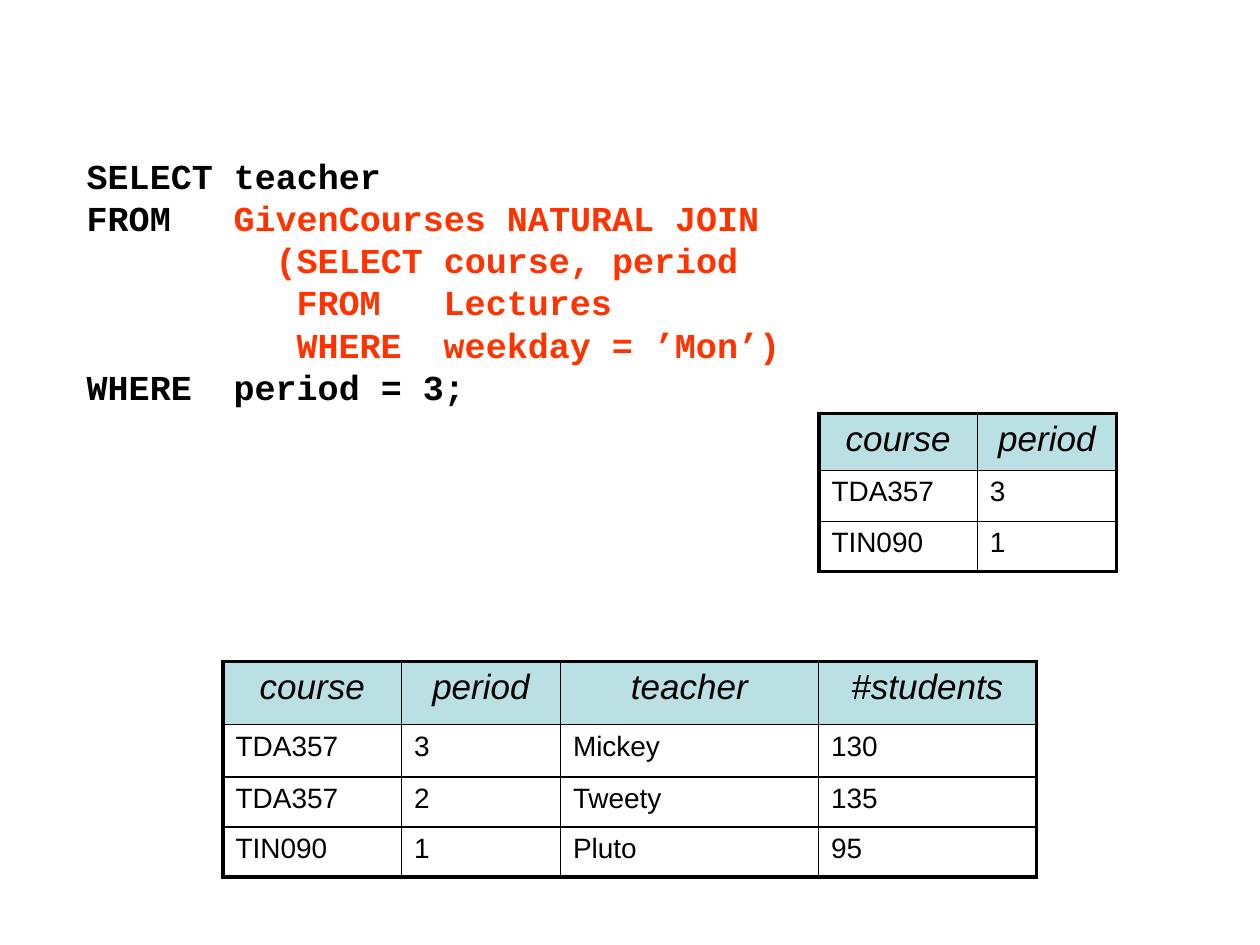
"""Build a slide that shows an SQL query with a subquery and two result tables."""
from lxml.etree import SubElement
from pptx import Presentation
from pptx.dml.color import RGBColor
from pptx.enum.text import PP_ALIGN
from pptx.oxml.ns import qn
from pptx.util import Pt

COLOURS = {"ink": "000000", "accent": "FF3300", "header": "BBE0E3"}
TAB_STOPS = [84, 108, 120, 204]
THIN, THICK = 1, 2.25

QUERY = [
    [("SELECT teacher", "ink")],
    [("FROM\t", "ink"), ("GivenCourses NATURAL JOIN", "accent")],
    [("\t\t(SELECT course, period", "accent")],
    [("\t\t\tFROM\tLectures", "accent")],
    [("\t\t\tWHERE\tweekday = ’Mon’)", "accent")],
    [("WHERE\tperiod = 3;", "ink")],
]
LECTURES = [["course", "period"], ["TDA357", "3"], ["TIN090", "1"]]
GIVEN_COURSES = [
    ["course", "period", "teacher", "#students"],
    ["TDA357", "3", "Mickey", "130"],
    ["TDA357", "2", "Tweety", "135"],
    ["TIN090", "1", "Pluto", "95"],
]


def colour(name):
    """Return the named colour."""
    return RGBColor.from_string(COLOURS[name])


def style_span(span, face, size, ink="ink"):
    """Set the font, size and colour of a run."""
    span.font.name = face
    span.font.size = Pt(size)
    span.font.color.rgb = colour(ink)


def add_query(page, left, top, width, height):
    """Add the query as one paragraph aligned by tab stops."""
    box = page.shapes.add_textbox(Pt(left), Pt(top), Pt(width), Pt(height))
    box.text_frame.word_wrap = True
    para = box.text_frame.paragraphs[0]
    para.space_before = Pt(10)
    para.line_spacing = Pt(24)
    tabs = SubElement(para._p.get_or_add_pPr(), qn("a:tabLst"))
    for stop in TAB_STOPS:
        SubElement(tabs, qn("a:tab"), pos=str(Pt(stop)), algn="l")
    for number, line in enumerate(QUERY):
        if number:
            para.add_line_break()
        for text, ink in line:
            span = para.add_run()
            span.text = text
            style_span(span, "Courier New", 20, ink)
            span.font.bold = True


def set_borders(cell, widths):
    """Draw the left, right, top and bottom borders of a cell."""
    properties = cell._tc.get_or_add_tcPr()
    for side, width in zip("LRTB", widths):
        line = SubElement(properties, qn(f"a:ln{side}"), w=str(Pt(width)))
        fill = SubElement(line, qn("a:solidFill"))
        SubElement(fill, qn("a:srgbClr"), val=COLOURS["ink"])


def fill_cell(cell, text, is_header):
    """Write and format the text of a cell and set its fill."""
    size = 20 if is_header else 16
    cell.text_frame.text = text
    para = cell.text_frame.paragraphs[0]
    para.space_before = Pt(size * 0.2)
    para.alignment = PP_ALIGN.CENTER if is_header else PP_ALIGN.LEFT
    span = para.runs[0]
    style_span(span, "Arial", size)
    span.font.italic = is_header
    if is_header:
        cell.fill.solid()
        cell.fill.fore_color.rgb = colour("header")
    else:
        cell.fill.background()


def add_grid(page, left, top, widths, heights, rows):
    """Add a table with a header row, thin inner lines and a thick frame."""
    frame = page.shapes.add_table(len(heights), len(widths), Pt(left), Pt(top),
                                  Pt(sum(widths)), Pt(sum(heights)))
    table = frame.table
    table.first_row = table.horz_banding = False
    for column, width in zip(table.columns, widths):
        column.width = Pt(width)
    last_row, last_column = len(heights) - 1, len(widths) - 1
    for r, (height, texts) in enumerate(zip(heights, rows)):
        table.rows[r].height = Pt(height)
        for c, text in enumerate(texts):
            cell = table.cell(r, c)
            edges = (c == 0, c == last_column, r == 0, r == last_row)
            set_borders(cell, [THICK if edge else THIN for edge in edges])
            fill_cell(cell, text, r == 0)


def main():
    """Build and save the slide."""
    deck = Presentation()
    deck.slide_width, deck.slide_height = Pt(720), Pt(540)
    page = deck.slides.add_slide(deck.slide_layouts[6])
    add_grid(page, 468, 236.25, [90.5, 79.5], [32.5, 29.25, 28.5], LECTURES)
    add_grid(page, 127.5, 378, [102, 90.75, 147.5, 124.5],
             [36, 30, 28.5, 28.75], GIVEN_COURSES)
    add_query(page, 42.5, 85, 471, 175)
    deck.save("out.pptx")


if __name__ == "__main__":
    main()
